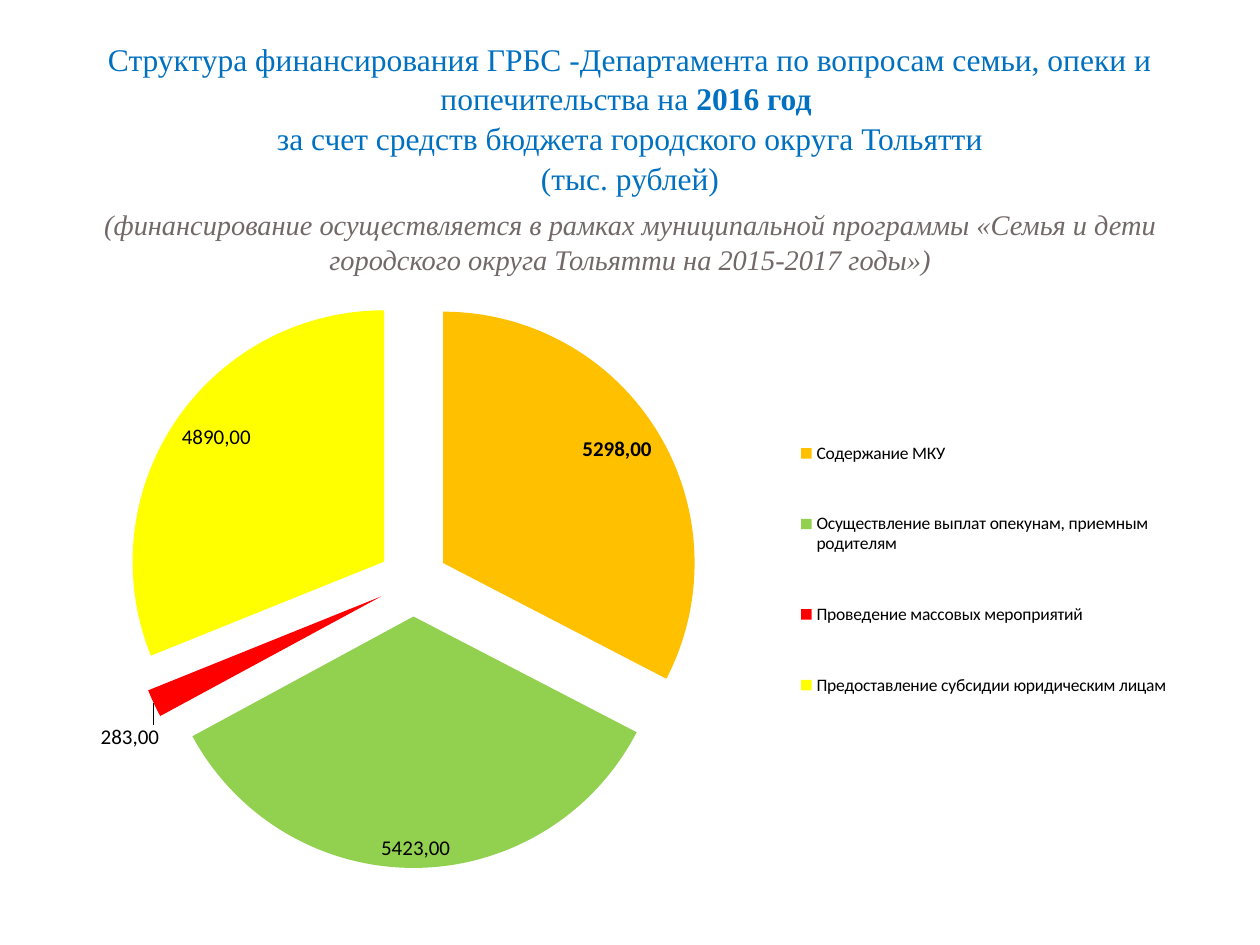
from pptx import Presentation
from pptx.chart.data import CategoryChartData
from pptx.dml.color import RGBColor as RGB
from pptx.enum.chart import XL_CHART_TYPE as ChartType, XL_LABEL_POSITION as LabelPos, XL_LEGEND_POSITION as LegendPos
from pptx.enum.text import MSO_ANCHOR, PP_ALIGN
from pptx.oxml import parse_xml
from pptx.oxml.ns import nsdecls, qn
from pptx.util import Inches, Pt

THEME = {
    "heading_font": "Times New Roman", "chart_font": "Calibri",
    "title": RGB.from_string("0070C0"), "note": RGB.from_string("726868"),
    "ink": RGB.from_string("000000"),
    "title_size": Pt(18), "note_size": Pt(16.2),
    "legend_size": Pt(10), "label_size": Pt(12),
}

TITLE_LINES = [
    [("Структура финансирования ГРБС -Департамента по вопросам семьи, опеки и попечительства на", False),
     (" 2016 год ", True)],
    [("за счет средств бюджета городского округа Тольятти", False)],
    [("(тыс. рублей)", False)],
]
NOTE = ("(финансирование осуществляется в рамках муниципальной программы "
        "«Семья и дети городского округа Тольятти на 2015-2017 годы»)")
EXPENSES = [
    ("Содержание МКУ", 5128, "FFC000"),
    ("Осуществление выплат опекунам, приемным родителям", 5423, "92D050"),
    ("Проведение массовых мероприятий", 283, "FF0000"),
    ("Предоставление субсидии юридическим лицам", 4890, "FFFF00"),
]
UPKEEP, EVENTS = 0, 2
UPKEEP_LABEL = "5298,00"


def style(font, name, size, color, bold=False, italic=False):
    font.name, font.size, font.bold, font.italic = name, size, bold, italic
    font.color.rgb = color


def manual_layout(**settings):
    parts = "".join(f'<c:{key} val="{value}"/>' for key, value in settings.items())
    return parse_xml(f'<c:layout {nsdecls("c")}><c:manualLayout>{parts}</c:manualLayout></c:layout>')


def add_heading(slide):
    frame = slide.shapes.add_textbox(Inches(0.5), Inches(0.3), Inches(9), Inches(2.04)).text_frame
    frame.word_wrap = True
    frame.vertical_anchor = MSO_ANCHOR.TOP
    frame.margin_top = 0
    for index, line in enumerate(TITLE_LINES + [[(NOTE, False)]]):
        paragraph = frame.paragraphs[0] if index == 0 else frame.add_paragraph()
        paragraph.alignment = PP_ALIGN.CENTER
        paragraph.line_spacing = 1.05
        is_note = index == len(TITLE_LINES)
        if is_note:
            paragraph.space_before = Pt(5)
        kind = "note" if is_note else "title"
        for words, bold in line:
            run = paragraph.add_run()
            run.text = words
            style(run.font, THEME["heading_font"], THEME[f"{kind}_size"], THEME[kind], bold, is_note)


def add_expense_pie(slide):
    data = CategoryChartData()
    data.categories = [name for name, _, _ in EXPENSES]
    data.add_series("Series 1", [amount for _, amount, _ in EXPENSES])
    chart = slide.shapes.add_chart(ChartType.PIE, Inches(0.23), Inches(2.34),
                                   Inches(9.53), Inches(4.84), data).chart
    style(chart.font, THEME["chart_font"], THEME["legend_size"], THEME["ink"])
    chart.has_title = False

    chart.has_legend = True
    legend = chart.legend
    legend.position = LegendPos.RIGHT
    legend.include_in_layout = False
    for old in legend._element.findall(qn("c:layout")):
        legend._element.remove(old)
    legend._element.find(qn("c:legendPos")).addnext(
        manual_layout(xMode="edge", yMode="edge", x=0.64, y=0.16, w=0.31, h=0.58))

    plot_area = chart._chartSpace.chart.plotArea
    for old in plot_area.findall(qn("c:layout")):
        plot_area.remove(old)
    plot_area.insert(0, manual_layout(layoutTarget="inner", xMode="edge", yMode="edge",
                                      x=0.01, y=0, w=0.62, h=0.94))

    plot = chart.plots[0]
    plot.vary_by_categories = True
    amounts = plot.series[0]
    explosion = parse_xml(f'<c:explosion {nsdecls("c")} val="14"/>')
    amounts._element.find(qn("c:tx")).addnext(explosion)
    for index, (_, _, color) in enumerate(EXPENSES):
        fill = amounts.points[index].format.fill
        fill.solid()
        fill.fore_color.rgb = RGB.from_string(color)

    labels = amounts.data_labels
    labels.show_value = True
    labels.number_format = '0",00"'
    labels.number_format_is_linked = False
    labels.position = LabelPos.INSIDE_END
    style(labels.font, THEME["chart_font"], THEME["label_size"], THEME["ink"])
    leader_lines = labels._element.find(qn("c:showLeaderLines"))
    if leader_lines is None:
        leader_lines = parse_xml(f'<c:showLeaderLines {nsdecls("c")}/>')
        labels._element.append(leader_lines)
    leader_lines.set("val", "1")

    upkeep_label = amounts.points[UPKEEP].data_label
    upkeep_label.text_frame.text = UPKEEP_LABEL
    upkeep_run = upkeep_label.text_frame.paragraphs[0].runs[0]
    style(upkeep_run.font, THEME["chart_font"], THEME["label_size"], THEME["ink"], bold=True)
    upkeep_label.position = LabelPos.INSIDE_END

    events_label = amounts.points[EVENTS].data_label
    style(events_label.font, THEME["chart_font"], THEME["label_size"], THEME["ink"])
    events_label.position = LabelPos.OUTSIDE_END
    events_element = labels._element.findall(qn("c:dLbl"))[-1]
    events_element.find(qn("c:idx")).addnext(manual_layout(x=0.01, y=0.03))
    events_element.find(qn("c:spPr")).addprevious(
        parse_xml(f'<c:numFmt {nsdecls("c")} formatCode="0&quot;,00&quot;" sourceLinked="0"/>')
    ) if events_element.find(qn("c:spPr")) is not None else None


def main():
    deck = Presentation()
    deck.slide_width, deck.slide_height = Inches(10), Inches(7.5)
    slide = deck.slides.add_slide(deck.slide_layouts[6])
    add_heading(slide)
    add_expense_pie(slide)
    deck.save("out.pptx")


if __name__ == "__main__":
    main()
